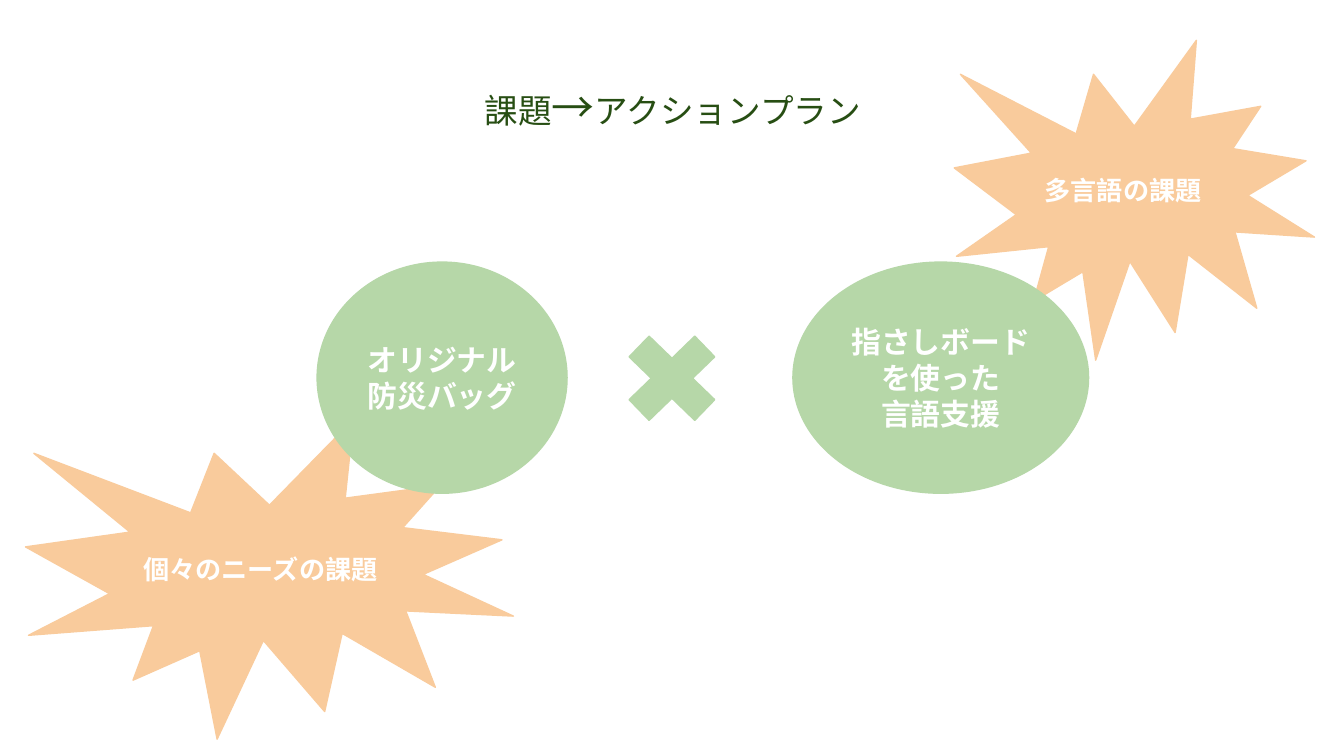
from pptx import Presentation, util as u
from pptx.dml.color import RGBColor
from pptx.enum import shapes as sh, text as tx

GREEN = RGBColor(0xB6, 0xD7, 0xA8)
PEACH = RGBColor(0xF9, 0xCB, 0x9C)
DARK = RGBColor(0x27, 0x4E, 0x13)
WHITE = RGBColor(0xFF, 0xFF, 0xFF)
KIND = sh.MSO_SHAPE
LEFT, MID = tx.PP_ALIGN.LEFT, tx.PP_ALIGN.CENTER
PAD = u.Inches(0.1)
FRAME = dict(word_wrap=True, margin_left=PAD, margin_right=PAD,
             margin_top=PAD, margin_bottom=PAD)


def set_all(obj, vals):
    for name, val in vals.items():
        setattr(obj, name, val)


def add_run(para, words, size, color, bold):
    run = para.add_run()
    run.text = words
    set_all(run.font, dict(name="Arial", size=u.Pt(size), bold=bold))
    run.font.color.rgb = color


# Widescreen page, 16 to 9
deck = Presentation()
deck.slide_width = u.Inches(10)
deck.slide_height = u.Inches(10) * 9 // 16
slide = deck.slides.add_slide(deck.slide_layouts[6])

# Times sign, issue bursts and plan ovals, from back to front
parts = [
    (KIND.MATH_MULTIPLY, (4.53, 2.36, 0.94, 0.91), GREEN, [], 16, MID),
    (KIND.EXPLOSION1, (7.1, 0.3, 2.68, 2.38), PEACH, ["多言語の課題"], 14, LEFT),
    (KIND.OVAL, (5.9, 1.95, 2.2, 1.72), GREEN,
     ["指さしボードを使った", "言語支援"], 16, MID),
    (KIND.EXPLOSION1, (0.19, 3.12, 3.63, 2.38), PEACH,
     ["個々のニーズの課題"], 14, LEFT),
    (KIND.OVAL, (2.36, 1.95, 1.86, 1.72), GREEN,
     ["オリジナル防災バッグ"], 16, MID),
]
for kind, box, color, lines, size, align in parts:
    shape = slide.shapes.add_shape(kind, *map(u.Inches, box))
    shape.shadow.inherit = False
    shape.fill.solid()
    shape.fill.fore_color.rgb = color
    shape.line.color.rgb = color
    shape.line.width = u.Pt(0.75)
    frame = shape.text_frame
    set_all(frame, FRAME)
    frame.vertical_anchor = tx.MSO_ANCHOR.MIDDLE
    for i, words in enumerate(lines):
        para = frame.add_paragraph() if i else frame.paragraphs[0]
        para.alignment = align
        add_run(para, words, size, WHITE, True)

# Title
title = slide.shapes.add_textbox(*map(u.Inches, (3.4, 0.5, 3.21, 0.59)))
set_all(title.text_frame, FRAME)
title.text_frame.auto_size = tx.MSO_AUTO_SIZE.SHAPE_TO_FIT_TEXT
para = title.text_frame.paragraphs[0]
para.alignment = MID
for words, size in [("課題", 18), ("→", 23), ("アクションプラン", 18)]:
    add_run(para, words, size, DARK, False)

deck.save("out.pptx")
